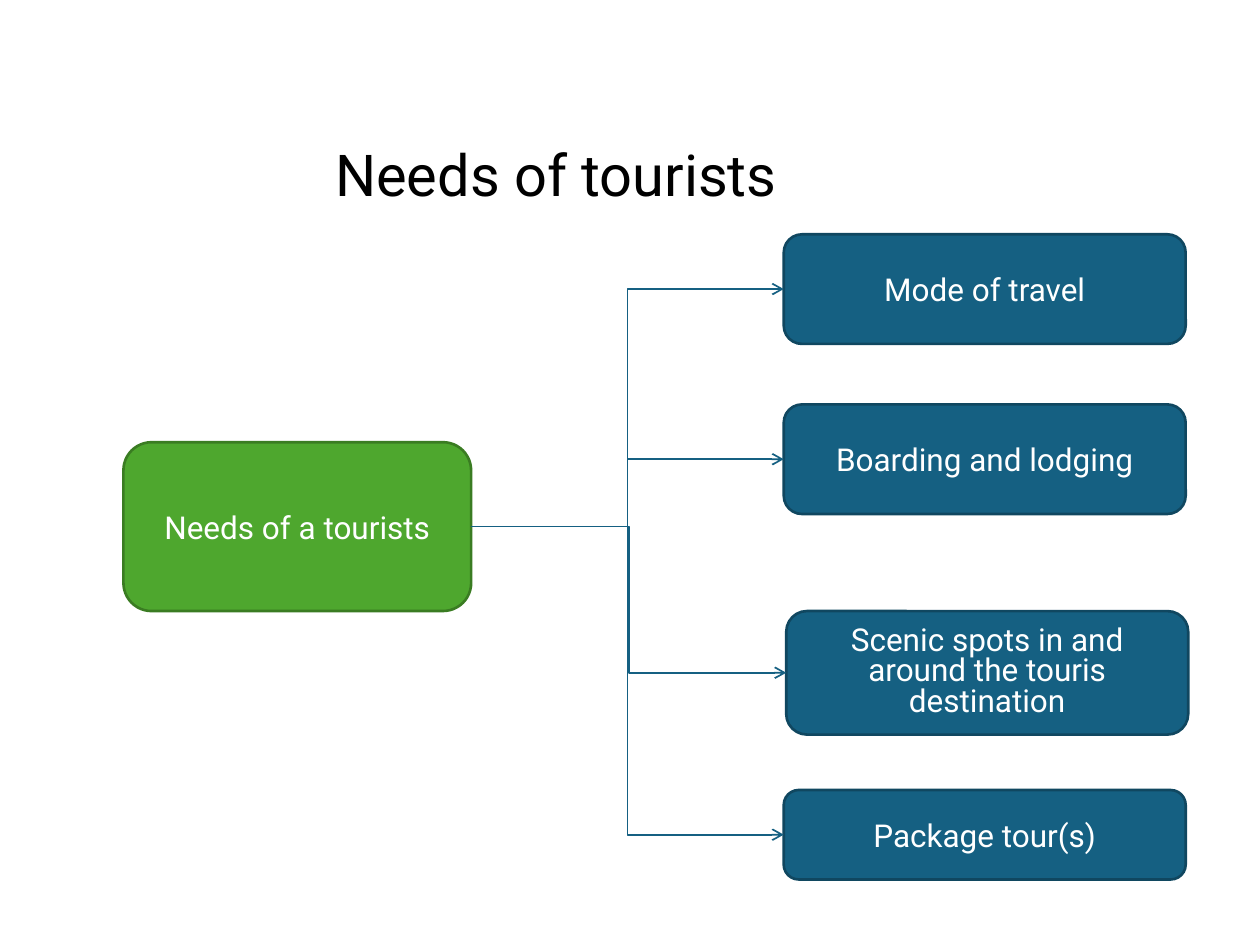
import pptx
import pptx.util
import pptx.dml.color
import pptx.enum.shapes
import pptx.enum.text
import pptx.oxml.ns
from lxml import etree

Inches, Pt = pptx.util.Inches, pptx.util.Pt
FONT = "Roboto"
COLORS = {
    "need": "156082", "need_edge": "104760",
    "root": "4EA72E", "root_edge": "3A7C22",
    "light": "FFFFFF", "dark": "000000",
}
NEED_X, NEED_W = 6.22, 3.19
# text, left, top, height, paragraph format
NEEDS = [
    ("Mode of travel", NEED_X, 1.86, 0.87, {}),
    ("Boarding and lodging", NEED_X, 3.21, 0.87, {}),
    ("Scenic spots in and around the touris destination", NEED_X + 0.02, 4.85, 0.98,
     {"line_spacing": 0.8, "space_before": Pt(7.5)}),
    ("Package tour(s)", NEED_X, 6.27, 0.71, {}),
]


def rgb(name):
    return pptx.dml.color.RGBColor.from_string(COLORS[name])


def set_text(s, text, size, color, align, para_format):
    tf = s.text_frame
    tf.word_wrap = True
    tf.vertical_anchor = pptx.enum.text.MSO_ANCHOR.MIDDLE
    p = tf.paragraphs[0]
    for key, value in {"alignment": align, **para_format}.items():
        setattr(p, key, value)
    r = p.add_run()
    r.text = text
    for key, value in {"name": FONT, "size": Pt(size)}.items():
        setattr(r.font, key, value)
    r.font.color.rgb = rgb(color)


def set_title(slide, text):
    s = slide.shapes.title
    box = {"left": 2.56, "top": 0.7, "width": 7.44, "height": 1.43}
    for key, value in box.items():
        setattr(s, key, Inches(value))
    set_text(s, text, 33, "dark", pptx.enum.text.PP_ALIGN.LEFT, {"line_spacing": 0.9})


def add_box(slide, text, box, kind, para_format):
    s = slide.shapes.add_shape(
        pptx.enum.shapes.MSO_SHAPE.ROUNDED_RECTANGLE, *map(Inches, box))
    s.shadow.inherit = False
    s.fill.solid()
    s.fill.fore_color.rgb = rgb(kind)
    s.line.color.rgb = rgb(kind + "_edge")
    s.line.width = Pt(1.5)
    set_text(s, text, 18, "light", pptx.enum.text.PP_ALIGN.CENTER, para_format)
    return s


def add_arrow(slide, start, end):
    """Elbow arrow from the right side of start to the left side of end."""
    s = slide.shapes.add_connector(
        pptx.enum.shapes.MSO_CONNECTOR.ELBOW,
        start.left + start.width, start.top + start.height // 2,
        end.left, end.top + end.height // 2)
    s.begin_connect(start, 3)
    s.end_connect(end, 1)
    s.line.color.rgb = rgb("need")
    s.line.width = Pt(1)
    qn = pptx.oxml.ns.qn
    etree.SubElement(s.line._get_or_add_ln(), qn("a:tailEnd"), type="arrow")
    etree.SubElement(s._element.spPr, qn("a:effectLst"))


def main():
    prs = pptx.Presentation()
    prs.slide_width, prs.slide_height = Inches(10), Inches(7.5)
    slide = prs.slides.add_slide(prs.slide_layouts[5])
    set_title(slide, "Needs of tourists")

    # Root box and the needs that branch from it
    root = add_box(slide, "Needs of a tourists", (0.98, 3.51, 2.76, 1.34), "root", {})
    needs = [add_box(slide, text, (x, y, NEED_W, h), "need", para_format)
             for text, x, y, h, para_format in NEEDS]

    # Branches
    for need in needs:
        add_arrow(slide, root, need)

    prs.save("out.pptx")


if __name__ == "__main__":
    main()
